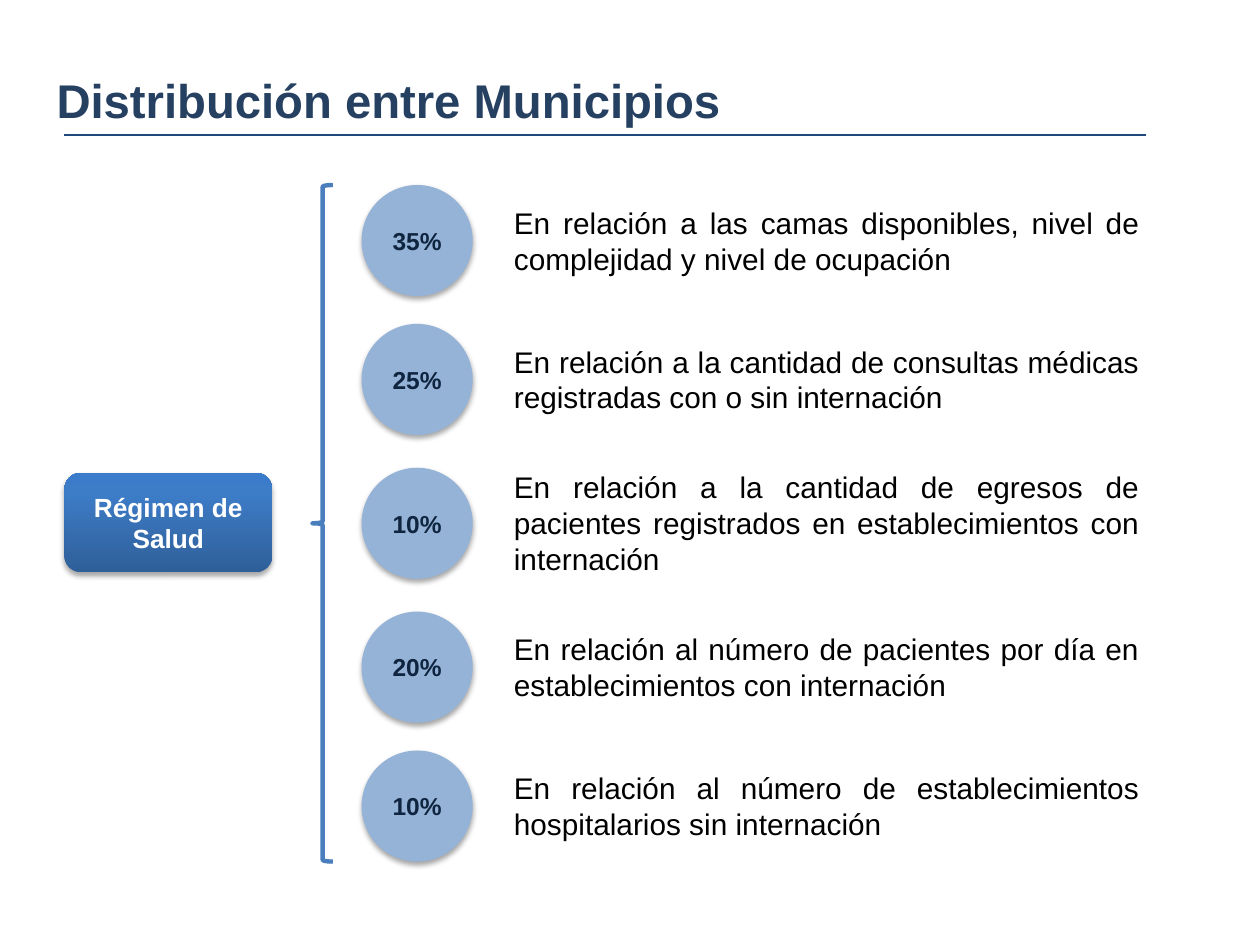
import pptx
import pptx.dml.color
import pptx.enum.shapes
import pptx.enum.text
import pptx.oxml
import pptx.oxml.ns
import pptx.util

Cm, Pt = pptx.util.Cm, pptx.util.Pt
SHAPE = pptx.enum.shapes.MSO_SHAPE
ALIGN = pptx.enum.text.PP_ALIGN
ANCHOR = pptx.enum.text.MSO_ANCHOR

TITLE = "Distribución entre Municipios"
SOURCE = "Régimen de Salud"
CRITERIA = [
    ("35%", "En relación a las camas disponibles, nivel de complejidad y nivel de ocupación", 2),
    ("25%", "En relación a la cantidad de consultas médicas registradas con o sin internación", 2),
    ("10%", "En relación a la cantidad de egresos de pacientes registrados en "
            "establecimientos con internación", 3),
    ("20%", "En relación al número de pacientes por día en establecimientos con internación", 2),
    ("10%", "En relación al número de establecimientos hospitalarios sin internación", 2),
]
COLORS = {
    "title": "254061", "rule": "1F497D", "brace": "4B7EBC", "circle": "95B3D7",
    "percent": "0F243E", "body": "000000", "white": "FFFFFF", "shadow": "000000",
}
GRADIENT = [(0, "2F5F99"), (80, "3D7CC7"), (100, "3A7CCB")]

LEFT, TOP, GAP = 1.3, 3.73, 0.56
CIRCLE_X, CIRCLE = 7.29, 2.24
TEXT_X, TEXT_W = 10.11, 13.11
TEXT_H = {2: 1.7, 3: 2.44}


def rgb(name):
    return pptx.dml.color.RGBColor.from_string(COLORS[name])


def add_xml(sp, xml):
    ns = pptx.oxml.ns.nsdecls("a")
    el = pptx.oxml.parse_xml(xml.replace(">", f" {ns}>", 1))
    sp._element.spPr.append(el)


def add_shadow(sp):
    add_xml(sp, '<a:effectLst><a:outerShdw blurRad="40000" dist="23000" dir="5400000" '
                f'rotWithShape="0"><a:srgbClr val="{COLORS["shadow"]}"><a:alpha val="35000"/>'
                '</a:srgbClr></a:outerShdw></a:effectLst>')


def set_text(sp, text, *, size, color, bold=False, align=ALIGN.LEFT, anchor=ANCHOR.TOP):
    tf = sp.text_frame
    tf.word_wrap = True
    tf.vertical_anchor = anchor
    p = tf.paragraphs[0]
    p.alignment = align
    r = p.add_run()
    r.text = text
    r.font.name = "Arial"
    r.font.size = Pt(size)
    r.font.bold = bold
    r.font.color.rgb = rgb(color)


def add_box(shapes, x, y, w, h, text, **fmt):
    set_text(shapes.add_textbox(Cm(x), Cm(y), Cm(w), Cm(h)), text, **fmt)


def add_shape(shapes, kind, x, y, w, h):
    sp = shapes.add_shape(kind, Cm(x), Cm(y), Cm(w), Cm(h))
    sp.line.fill.background()
    return sp


prs = pptx.Presentation()
prs.slide_width, prs.slide_height = Cm(25.4), Cm(19.05)
s = prs.slides.add_slide(prs.slide_layouts[6])

rule = s.shapes.add_connector(pptx.enum.shapes.MSO_CONNECTOR.STRAIGHT,
                              Cm(LEFT), Cm(2.72), Cm(23.11), Cm(2.72))
rule.line.color.rgb = rgb("rule")
rule.line.width = Pt(1.5)
add_xml(rule, "<a:effectLst></a:effectLst>")

add_box(s.shapes, 0.89, 1.32, 22.4, 1.42, TITLE, size=27, color="title", bold=True)

y = TOP
for percent, text, lines in CRITERIA:
    text_h = TEXT_H[lines]
    row_h = max(CIRCLE, text_h)
    g = s.shapes.add_group_shape()
    sp = add_shape(g.shapes, SHAPE.OVAL, CIRCLE_X, y + (row_h - CIRCLE) / 2, CIRCLE, CIRCLE)
    sp.fill.solid()
    sp.fill.fore_color.rgb = rgb("circle")
    add_shadow(sp)
    set_text(sp, percent, size=14, color="percent", bold=True,
             align=ALIGN.CENTER, anchor=ANCHOR.MIDDLE)
    add_box(g.shapes, TEXT_X, y + (row_h - text_h) / 2, TEXT_W, text_h, text,
            size=17, color="body", align=ALIGN.JUSTIFY)
    y += row_h + GAP

brace = add_shape(s.shapes, SHAPE.LEFT_BRACE, 6.3, TOP, 0.41, y - GAP - TOP)
brace.shadow.inherit = False
brace.fill.background()
brace.line.color.rgb = rgb("brace")
brace.line.width = Pt(2.5)

sp = add_shape(s.shapes, SHAPE.ROUNDED_RECTANGLE, LEFT, 9.53, 4.19, 2.01)
sp.fill.gradient()
sp.fill.gradient_angle = 90
stops = sp._element.spPr.find(pptx.oxml.ns.qn("a:gradFill")).find(pptx.oxml.ns.qn("a:gsLst"))
for stop in list(stops):
    stops.remove(stop)
for pos, color in GRADIENT:
    stops.append(pptx.oxml.parse_xml(
        f'<a:gs {pptx.oxml.ns.nsdecls("a")} pos="{pos * 1000}"><a:srgbClr val="{color}"/></a:gs>'))
add_shadow(sp)
set_text(sp, SOURCE, size=15, color="white", bold=True,
         align=ALIGN.CENTER, anchor=ANCHOR.MIDDLE)

prs.save("out.pptx")
